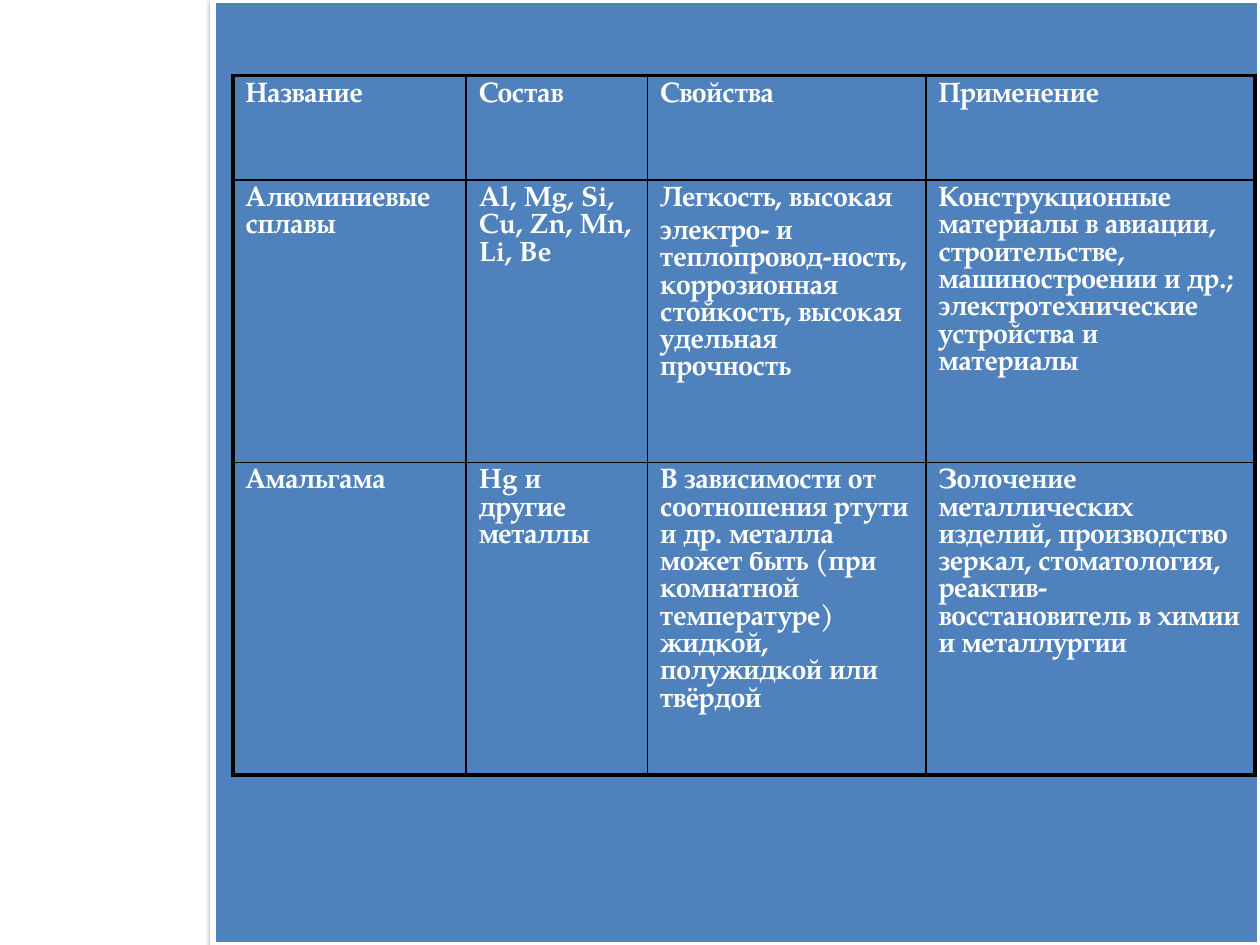
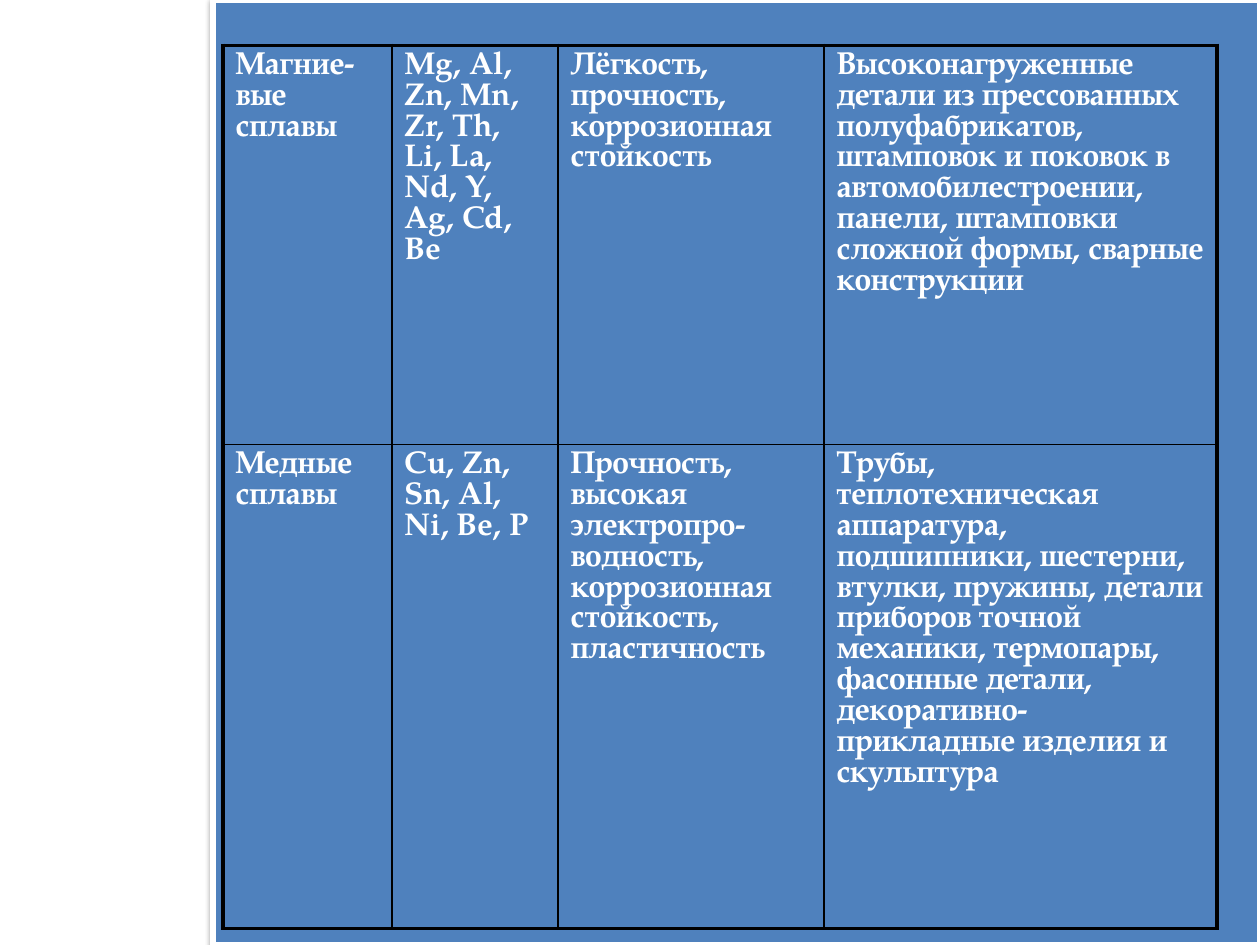
from lxml import etree
from pptx import Presentation
from pptx import util as u
from pptx.dml.color import RGBColor
from pptx.enum import shapes
from pptx.oxml import ns

COLORS = {"panel": "4F81BD", "edge": "FFFFFF", "text": "FFFFFF",
          "grid": "000000", "shadow": "000000"}
FONT = "TeX Gyre Pagella"
OUTER, INNER = 2.25, 1
PANEL_BOX = (1.69, 0, 8.31, 7.5)

ALLOYS = [
    {"origin": (1.85, 0.6), "columns": (1.85, 1.44, 2.21, 2.61),
     "heights": (0.83, 2.24, 2.48), "size": 16,
     "rows": [
         ["Название", "Состав", "Свойства", "Применение"],
         ["Алюминиевые сплавы",
          "Al, Mg, Si, Cu, Zn, Mn, Li, Be",
          "Легкость, высокая\nэлектро- и теплопровод-ность, коррозионная "
          "стойкость, высокая удельная прочность",
          "Конструкционные материалы в авиации, строительстве, "
          "машиностроении и др.; электротехнические устройства и материалы"],
         ["Амальгама",
          "Hg и другие металлы",
          "В зависимости от соотношения ртути и др. металла может быть "
          "(при комнатной температуре) жидкой, полужидкой или твёрдой",
          "Золочение металлических изделий, производство зеркал, "
          "стоматология, реактив- восстановитель в химии и металлургии"],
     ]},
    {"origin": (1.77, 0.36), "columns": (1.34, 1.32, 2.11, 3.12),
     "heights": (3.17, 3.84), "size": 18,
     "rows": [
         ["Магние-вые сплавы",
          "Mg, Al, Zn, Mn, Zr, Th, Li, La, Nd, Y, Ag, Cd, Be",
          "Лёгкость, прочность, коррозионная стойкость",
          "Высоконагруженные детали из прессованных полуфабрикатов, "
          "штамповок и поковок в автомобилестроении, панели, штамповки "
          "сложной формы, сварные конструкции"],
         ["Медные сплавы",
          "Cu, Zn, Sn, Al, Ni, Be, P",
          "Прочность, высокая электропро-водность, коррозионная стойкость, "
          "пластичность",
          "Трубы, теплотехническая аппаратура, подшипники, шестерни, втулки, "
          "пружины, детали приборов точной механики, термопары, фасонные "
          "детали, декоративно-прикладные изделия и скульптура"],
     ]},
]


def rgb(name):
    return RGBColor.from_string(COLORS[name])


def add_xml(parent, tag, **attributes):
    values = {key: str(value) for key, value in attributes.items()}
    return etree.SubElement(parent, ns.qn(tag), values)


# Blue panel with a white edge and a soft shadow
def draw_panel(slide, box):
    panel = slide.shapes.add_shape(shapes.MSO_SHAPE.RECTANGLE,
                                   *(u.Inches(length) for length in box))
    panel.fill.solid()
    panel.fill.fore_color.rgb = rgb("panel")
    panel.line.color.rgb = rgb("edge")
    panel.line.width = u.Pt(3)
    panel.shadow.inherit = False
    effects = panel._element.spPr.find(ns.qn("a:effectLst"))
    shadow = add_xml(effects, "a:outerShdw", blurRad=u.Pt(3.1), dist=u.Pt(1.6),
                     dir=90 * 60000, rotWithShape=0)
    tint = add_xml(shadow, "a:srgbClr", val=COLORS["shadow"])
    add_xml(tint, "a:alpha", val=38000)


def set_borders(cell, widths):
    properties = cell._tc.get_or_add_tcPr()
    for side, width in widths.items():
        line = add_xml(properties, f"a:ln{side}", w=u.Pt(width))
        add_xml(add_xml(line, "a:solidFill"), "a:srgbClr", val=COLORS["grid"])


def write_cell(cell, wording, size):
    cell.text = wording
    font_format = {"name": FONT, "size": u.Pt(size), "bold": True}
    for index, paragraph in enumerate(cell.text_frame.paragraphs):
        if index:
            paragraph.space_before = u.Pt(0.2 * size)
        for run in paragraph.runs:
            for attribute, value in font_format.items():
                setattr(run.font, attribute, value)
            run.font.color.rgb = rgb("text")


# Alloy table: heavy frame, thin inner grid, transparent cells
def draw_alloys(slide, origin, columns, heights, size, rows):
    box = (*origin, sum(columns), sum(heights))
    grid = slide.shapes.add_table(len(heights), len(columns),
                                  *(u.Inches(length) for length in box)).table
    grid.first_row = grid.horz_banding = False
    for column, width in zip(grid.columns, columns):
        column.width = u.Inches(width)
    for row, height in zip(grid.rows, heights):
        row.height = u.Inches(height)

    last_row, last_column = len(heights) - 1, len(columns) - 1
    for r, wordings in enumerate(rows):
        for c, wording in enumerate(wordings):
            cell = grid.cell(r, c)
            write_cell(cell, wording, size)
            on_frame = {"L": c == 0, "R": c == last_column,
                        "T": r == 0, "B": r == last_row}
            set_borders(cell, {side: OUTER if outer else INNER
                               for side, outer in on_frame.items()})
            cell.fill.background()


def main():
    prs = Presentation()
    prs.slide_width, prs.slide_height = u.Inches(10), u.Inches(7.5)
    for alloys in ALLOYS:
        slide = prs.slides.add_slide(prs.slide_layouts[6])
        draw_panel(slide, PANEL_BOX)
        draw_alloys(slide, **alloys)
    prs.save("out.pptx")


if __name__ == "__main__":
    main()
